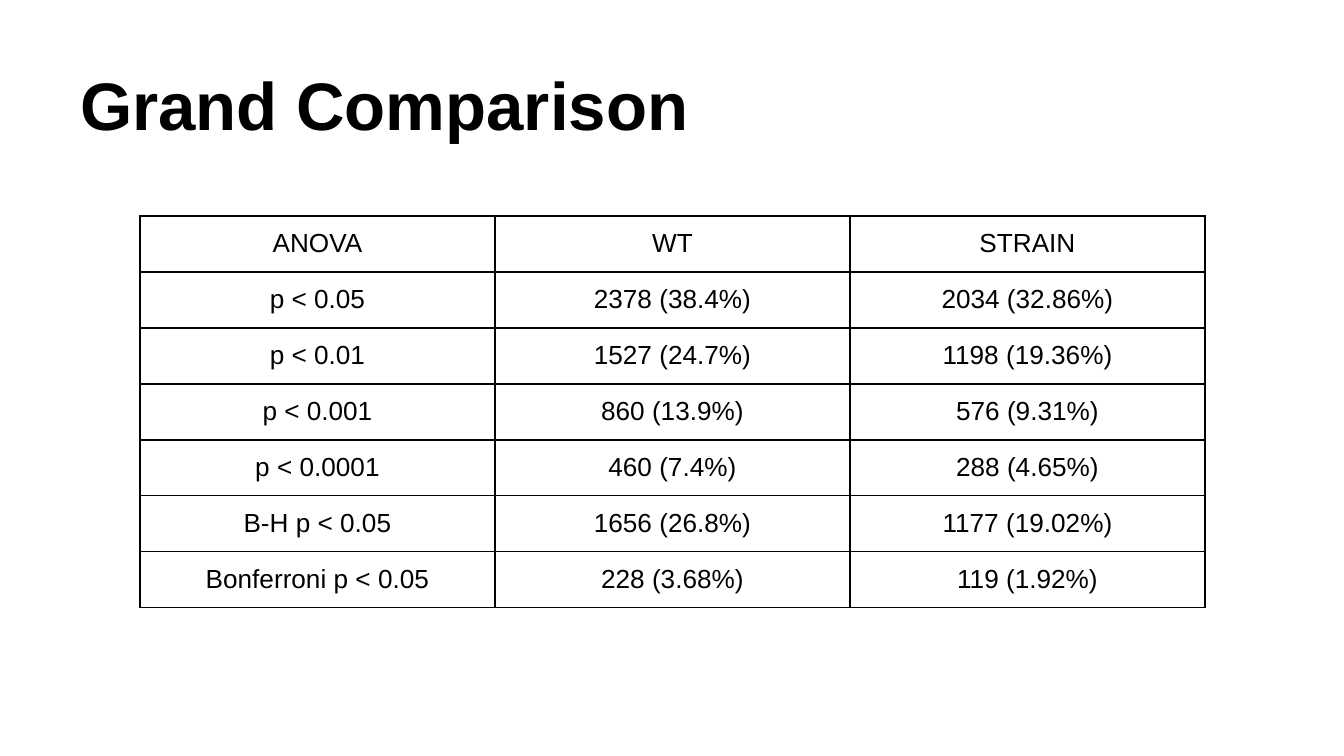
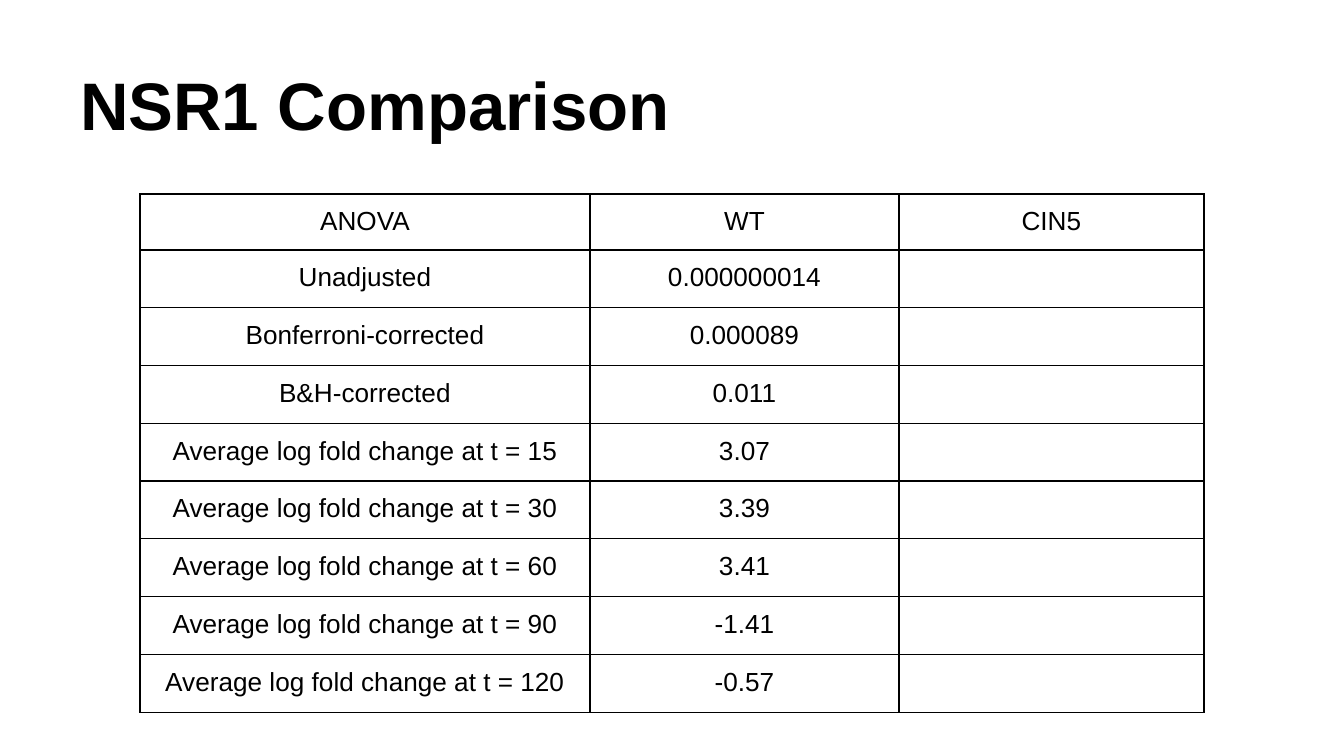
from dataclasses import dataclass
from lxml.etree import SubElement
from pptx import Presentation
from pptx.dml.color import RGBColor as Color
from pptx.enum.text import MSO_ANCHOR as Anchor, MSO_AUTO_SIZE as AutoSize, PP_ALIGN as Align
from pptx.oxml.ns import qn
from pptx.util import Pt

EMU_PER_INCH = 914400
PX_PER_INCH = 134.4


@dataclass(frozen=True)
class Theme:
    """Colours, font and sizes that the slides share."""
    font: str = "Arial"
    ink: str = "000000"
    paper: str = "FFFFFF"
    title_size: int = 36
    cell_size: int = 14
    border_width: float = 0.75
    inset: int = 13


THEME = Theme()
PAGE_SIZE = (1344, 756)
TITLE_BOX = (67, 31, 1210, 126)
ROW_HEIGHT = 56

GRAND_ROWS = [
    ("ANOVA", "WT", "STRAIN"),
    ("p < 0.05", "2378 (38.4%)", "2034 (32.86%)"),
    ("p < 0.01", "1527 (24.7%)", "1198 (19.36%)"),
    ("p < 0.001", "860 (13.9%)", "576 (9.31%)"),
    ("p < 0.0001", "460 (7.4%)", "288 (4.65%)"),
    ("B-H p < 0.05", "1656 (26.8%)", "1177 (19.02%)"),
    ("Bonferroni p < 0.05", "228 (3.68%)", "119 (1.92%)"),
]
FOLD_CHANGES = {15: "3.07", 30: "3.39", 60: "3.41", 90: "-1.41", 120: "-0.57"}
NSR1_ROWS = [
    ("ANOVA", "WT", "CIN5"),
    ("Unadjusted", "0.000000014", ""),
    ("Bonferroni-corrected", "0.000089", ""),
    ("B&H-corrected", "0.011", ""),
    *((f"Average log fold change at t = {time}", change, "")
      for time, change in FOLD_CHANGES.items()),
]


def px(length):
    """Turn pixels into EMU."""
    return round(length * EMU_PER_INCH / PX_PER_INCH)


def set_insets(target):
    """Give a cell or text frame the same inset on all sides."""
    for side in ("left", "right", "top", "bottom"):
        setattr(target, f"margin_{side}", px(THEME.inset))


def write_text(frame, text, size, bold=False, align=Align.LEFT):
    """Write one formatted paragraph, keeping the size when it is empty."""
    para = frame.paragraphs[0]
    para.alignment = align
    if not text:
        SubElement(para._p, qn("a:endParaRPr"), sz=str(size * 100))
        return
    span = para.add_run()
    span.text = text
    span.font.name = THEME.font
    span.font.size = Pt(size)
    span.font.bold = bold
    span.font.color.rgb = Color.from_string(THEME.ink)


def add_borders(cell):
    """Draw a thin line on each side of a cell."""
    properties = cell._tc.get_or_add_tcPr()
    for side in ("lnL", "lnR", "lnT", "lnB"):
        line = SubElement(properties, qn(f"a:{side}"), w=str(Pt(THEME.border_width)))
        SubElement(SubElement(line, qn("a:solidFill")), qn("a:srgbClr"), val=THEME.ink)


def place_title(page, box, text):
    """Move and fill the title placeholder."""
    title = page.shapes.title
    title.left, title.top, title.width, title.height = map(px, box)
    frame = title.text_frame
    frame.word_wrap = True
    frame.auto_size = AutoSize.NONE
    frame.vertical_anchor = Anchor.BOTTOM
    set_insets(frame)
    write_text(frame, text, THEME.title_size, bold=True)


def place_table(page, origin, widths, rows):
    """Build a plain bordered table from its top left corner."""
    left, top = origin
    frame = page.shapes.add_table(len(rows), len(widths), px(left), px(top),
                                  px(sum(widths)), px(ROW_HEIGHT * len(rows)))
    table = frame.table
    table.first_row = table.horz_banding = False
    for column, width in zip(table.columns, widths):
        column.width = px(width)
    for row, texts in zip(table.rows, rows):
        row.height = px(ROW_HEIGHT)
        for cell, text in zip(row.cells, texts):
            set_insets(cell)
            add_borders(cell)
            cell.fill.background()
            write_text(cell.text_frame, text, THEME.cell_size, align=Align.CENTER)


def add_comparison(deck, title, origin, widths, rows):
    """Add a slide with a title over a comparison table."""
    page = deck.slides.add_slide(deck.slide_layouts.get_by_name("Title Only"))
    page.background.fill.solid()
    page.background.fill.fore_color.rgb = Color.from_string(THEME.paper)
    place_title(page, TITLE_BOX, title)
    place_table(page, origin, widths, rows)


def main():
    """Build and save the deck."""
    deck = Presentation()
    deck.slide_width, deck.slide_height = map(px, PAGE_SIZE)
    add_comparison(deck, "Grand Comparison", (140, 216), [355] * 3, GRAND_ROWS)
    add_comparison(deck, "NSR1 Comparison", (140, 194), [450, 309, 305], NSR1_ROWS)
    deck.save("out.pptx")


if __name__ == "__main__":
    main()
